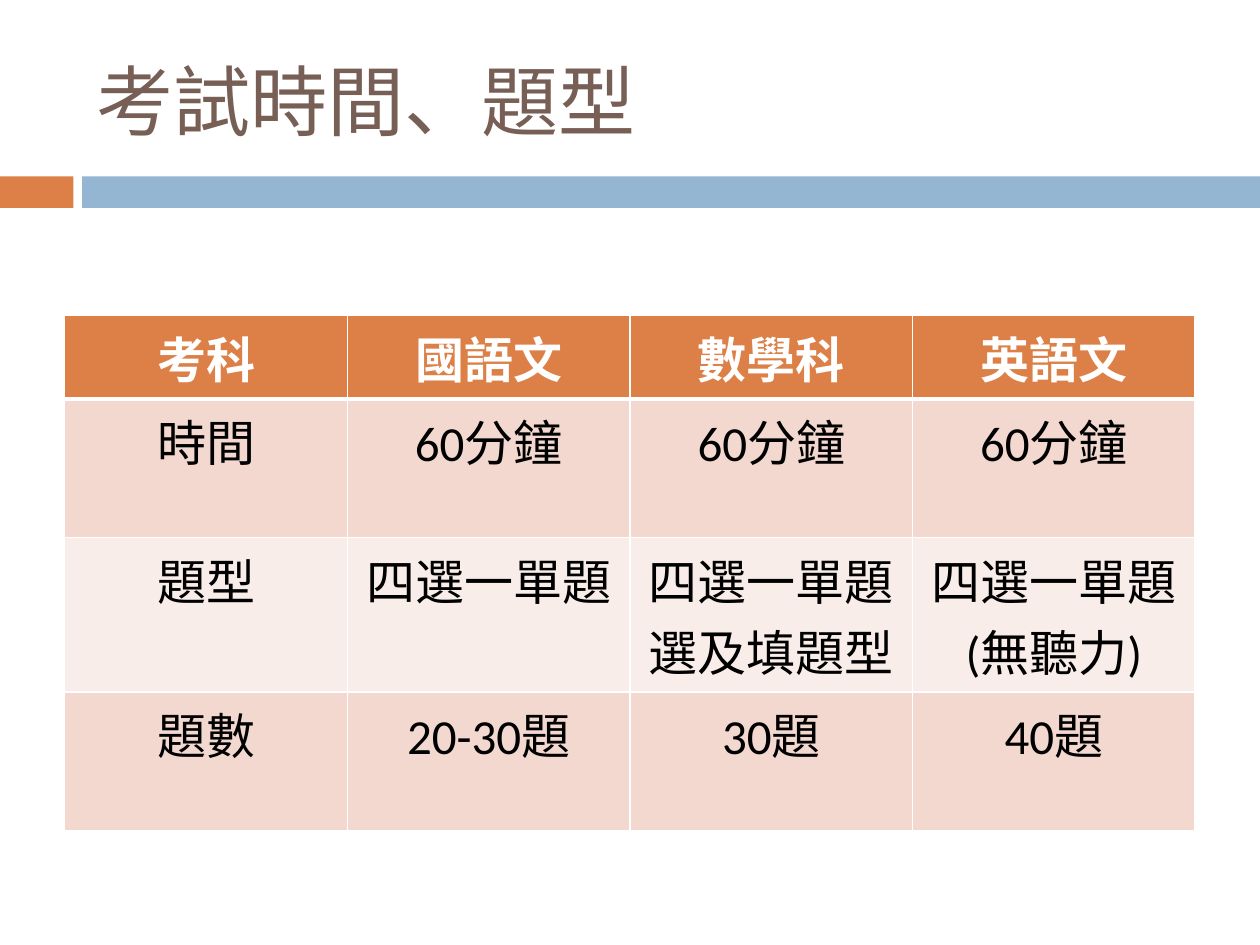
from lxml import etree
from pptx import Presentation
from pptx.dml.color import RGBColor as RGB
from pptx.enum.shapes import MSO_SHAPE as SHAPE
from pptx.enum.text import MSO_ANCHOR as ANCHOR, MSO_AUTO_SIZE as AUTO, PP_ALIGN as ALIGN
from pptx.oxml.ns import qn
from pptx.util import Pt

ORANGE = RGB(0xDD, 0x80, 0x47)
BLUE = RGB(0x94, 0xB6, 0xD2)
BROWN = RGB(0x77, 0x5F, 0x55)
PINK = RGB(0xF2, 0xD8, 0xCF)
PALE = RGB(0xF9, 0xED, 0xE9)
WHITE = RGB(0xFF, 0xFF, 0xFF)
BLACK = RGB(0, 0, 0)

ROWS = [
    ["考科", "國語文", "數學科", "英語文"],
    ["時間", "60分鐘", "60分鐘", "60分鐘"],
    ["題型", "四選一單題", "四選一單題\n選及填題型", "四選一單題(無聽力)"],
    ["題數", "20-30題", "30題", "40題"],
]


def write(tf, text, size=28, color=BLACK, bold=False, align=ALIGN.CENTER):
    """Fill a text frame, one paragraph for each line of text."""
    for i, line in enumerate(text.split("\n")):
        p = tf.paragraphs[0] if i == 0 else tf.add_paragraph()
        p.alignment = align
        r = p.add_run()
        r.text = line
        r.font.name = "Calibri"
        r.font.size = Pt(size)
        r.font.bold = bold
        r.font.color.rgb = color


def add_title(s, text, x, y, w, h):
    """Place the title placeholder in its box."""
    sp = s.shapes.title
    sp.left, sp.top, sp.width, sp.height = Pt(x), Pt(y), Pt(w), Pt(h)
    tf = sp.text_frame
    tf.word_wrap = True
    tf.auto_size = AUTO.NONE
    tf.vertical_anchor = ANCHOR.MIDDLE
    write(tf, text, size=44, color=BROWN, align=ALIGN.LEFT)


def add_band(s, x, y, w, h, accent=42, gap=5):
    """Draw the band below the title: a short accent, a gap and a long bar."""
    bar = accent + gap
    for left, width, color in [(x, accent, ORANGE), (x + bar, w - bar, BLUE)]:
        sp = s.shapes.add_shape(SHAPE.RECTANGLE, Pt(left), Pt(y), Pt(width), Pt(h))
        sp.shadow.inherit = False
        sp.fill.solid()
        sp.fill.fore_color.rgb = color
        sp.line.fill.background()


def set_borders(cell, **widths):
    """Give a cell white borders, with widths in points by side."""
    props = cell._tc.get_or_add_tcPr()
    for i, (side, width) in enumerate(widths.items()):
        ln = etree.Element(qn(f"a:ln{side}"), w=str(Pt(width)))
        fill = etree.SubElement(ln, qn("a:solidFill"))
        etree.SubElement(fill, qn("a:srgbClr"), val=str(WHITE))
        props.insert(i, ln)


def add_exam_table(s, rows, x, y, w, head_h=48, row_h=79.2):
    """Draw the exam table with a header row and banded body rows."""
    count = len(rows)
    height = head_h + row_h * (count - 1)
    table = s.shapes.add_table(count, len(rows[0]), Pt(x), Pt(y), Pt(w), Pt(height)).table
    for col in table.columns:
        col.width = Pt(w / len(rows[0]))
    for i, row in enumerate(rows):
        head = i == 0
        table.rows[i].height = Pt(head_h if head else row_h)
        for j, text in enumerate(row):
            cell = table.cell(i, j)
            cell.fill.solid()
            cell.fill.fore_color.rgb = ORANGE if head else PINK if i % 2 else PALE
            set_borders(cell, L=1, R=1, T=3 if i == 1 else 1, B=3 if head else 1)
            write(cell.text_frame, text, color=WHITE if head else BLACK, bold=head)


def main():
    """Build the slide and save it."""
    prs = Presentation()
    prs.slide_width, prs.slide_height = Pt(720), Pt(540)
    s = prs.slides.add_slide(prs.slide_layouts[5])
    add_band(s, 0, 100.8, 720, 18)
    add_title(s, "考試時間、題型", 48, 18, 642, 78)
    add_exam_table(s, ROWS, 37, 180, 646)
    prs.save("out.pptx")


if __name__ == "__main__":
    main()
